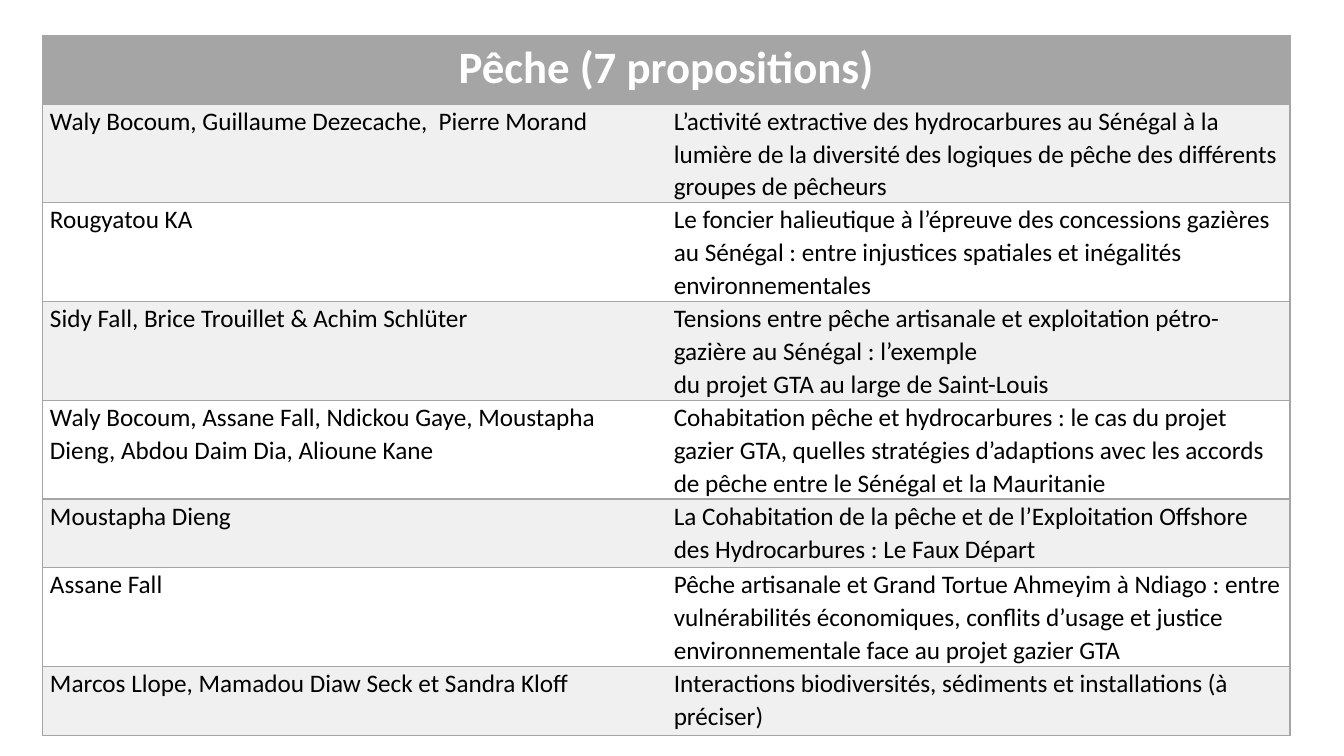
"""Build a slide with a table of seven proposals about fishing."""
import dataclasses

import lxml.etree
import pptx
import pptx.dml.color
import pptx.enum.text
import pptx.oxml.ns
import pptx.util

Cm = pptx.util.Cm
Pt = pptx.util.Pt
RGBColor = pptx.dml.color.RGBColor


@dataclasses.dataclass(frozen=True)
class Theme:
    font: str = "Calibri"
    header_size: int = 32
    body_size: int = 18
    line_spacing: float = 1.07
    border_width: int = 1
    grey: str = "A5A5A5"
    band: str = "F0F0F0"
    white: str = "FFFFFF"
    black: str = "000000"


THEME = Theme()
HEADING = "Pêche (7 propositions)"
HEADER_HEIGHT = 1.73
COLUMN_WIDTH = 15.72
PROPOSALS = [
    (2.21, "Waly Bocoum, Guillaume Dezecache,  Pierre Morand",
     "L’activité extractive des hydrocarbures au Sénégal à la lumière de la "
     "diversité des logiques de pêche des différents groupes de pêcheurs"),
    (2.21, "Rougyatou KA",
     "Le foncier halieutique à l’épreuve des concessions gazières au Sénégal : "
     "entre injustices spatiales et inégalités environnementales"),
    (2.49, "Sidy Fall, Brice Trouillet & Achim Schlüter",
     "Tensions entre pêche artisanale et exploitation pétro-gazière au Sénégal : "
     "l’exemple\ndu projet GTA au large de Saint-Louis"),
    (2.49, "Waly Bocoum, Assane Fall, Ndickou Gaye, Moustapha Dieng, "
     "Abdou Daim Dia, Alioune Kane",
     "Cohabitation pêche et hydrocarbures : le cas du projet gazier GTA, quelles "
     "stratégies d’adaptions avec les accords de pêche entre le Sénégal et la "
     "Mauritanie"),
    (1.73, "Moustapha Dieng",
     "La Cohabitation de la pêche et de l’Exploitation Offshore des "
     "Hydrocarbures : Le Faux Départ"),
    (2.49, "Assane Fall",
     "Pêche artisanale et Grand Tortue Ahmeyim à Ndiago : entre vulnérabilités "
     "économiques, conflits d’usage et justice environnementale face au projet "
     "gazier GTA"),
    (1.73, "Marcos Llope, Mamadou Diaw Seck et Sandra Kloff",
     "Interactions biodiversités, sédiments et installations (à préciser)"),
]


def set_borders(cell, visible_sides):
    properties = cell._tc.get_or_add_tcPr()
    for position, side in enumerate("LRTB"):
        line = lxml.etree.Element(pptx.oxml.ns.qn(f"a:ln{side}"))
        line.set("w", str(Pt(THEME.border_width)))
        if side in visible_sides:
            fill = lxml.etree.SubElement(line, pptx.oxml.ns.qn("a:solidFill"))
            color = lxml.etree.SubElement(fill, pptx.oxml.ns.qn("a:srgbClr"))
            color.set("val", THEME.grey)
        else:
            lxml.etree.SubElement(line, pptx.oxml.ns.qn("a:noFill"))
        properties.insert(position, line)


def fill_cell(cell, color, visible_sides):
    cell.fill.solid()
    cell.fill.fore_color.rgb = RGBColor.from_string(color)
    set_borders(cell, visible_sides)


def format_runs(paragraph, size, color, bold):
    for run in paragraph.runs:
        run.font.name = THEME.font
        run.font.size = Pt(size)
        run.font.bold = bold
        run.font.color.rgb = RGBColor.from_string(color)


def write_header(table):
    header = table.cell(0, 0)
    header.merge(table.cell(0, 1))
    for cell in table.rows[0].cells:
        fill_cell(cell, THEME.grey, "LRTB")
    header.text_frame.text = HEADING
    paragraph = header.text_frame.paragraphs[0]
    paragraph.alignment = pptx.enum.text.PP_ALIGN.CENTER
    format_runs(paragraph, THEME.header_size, THEME.white, True)


def write_body_cell(cell, text, color, visible_sides):
    fill_cell(cell, color, visible_sides)
    cell.margin_left = cell.margin_right = Cm(0.19)
    cell.margin_top = cell.margin_bottom = 0
    cell.text_frame.text = text
    for paragraph in cell.text_frame.paragraphs:
        paragraph.line_spacing = THEME.line_spacing
        format_runs(paragraph, THEME.body_size, THEME.black, False)


def add_proposal_table(slide):
    heights = [HEADER_HEIGHT] + [proposal[0] for proposal in PROPOSALS]
    shape = slide.shapes.add_table(
        len(heights), 2, Cm(1.07), Cm(0.89),
        Cm(2 * COLUMN_WIDTH), Cm(sum(heights)))
    table = shape.table
    for column in table.columns:
        column.width = Cm(COLUMN_WIDTH)
    for row, height in zip(table.rows, heights):
        row.height = Cm(height)
    write_header(table)
    for index, (_, authors, subject) in enumerate(PROPOSALS, start=1):
        color = THEME.band if index % 2 else THEME.white
        write_body_cell(table.cell(index, 0), authors, color, "LTB")
        write_body_cell(table.cell(index, 1), subject, color, "RTB")


def main():
    presentation = pptx.Presentation()
    presentation.slide_width = Cm(33.87)
    presentation.slide_height = Cm(19.05)
    slide = presentation.slides.add_slide(presentation.slide_layouts[6])
    add_proposal_table(slide)
    presentation.save("out.pptx")


if __name__ == "__main__":
    main()
